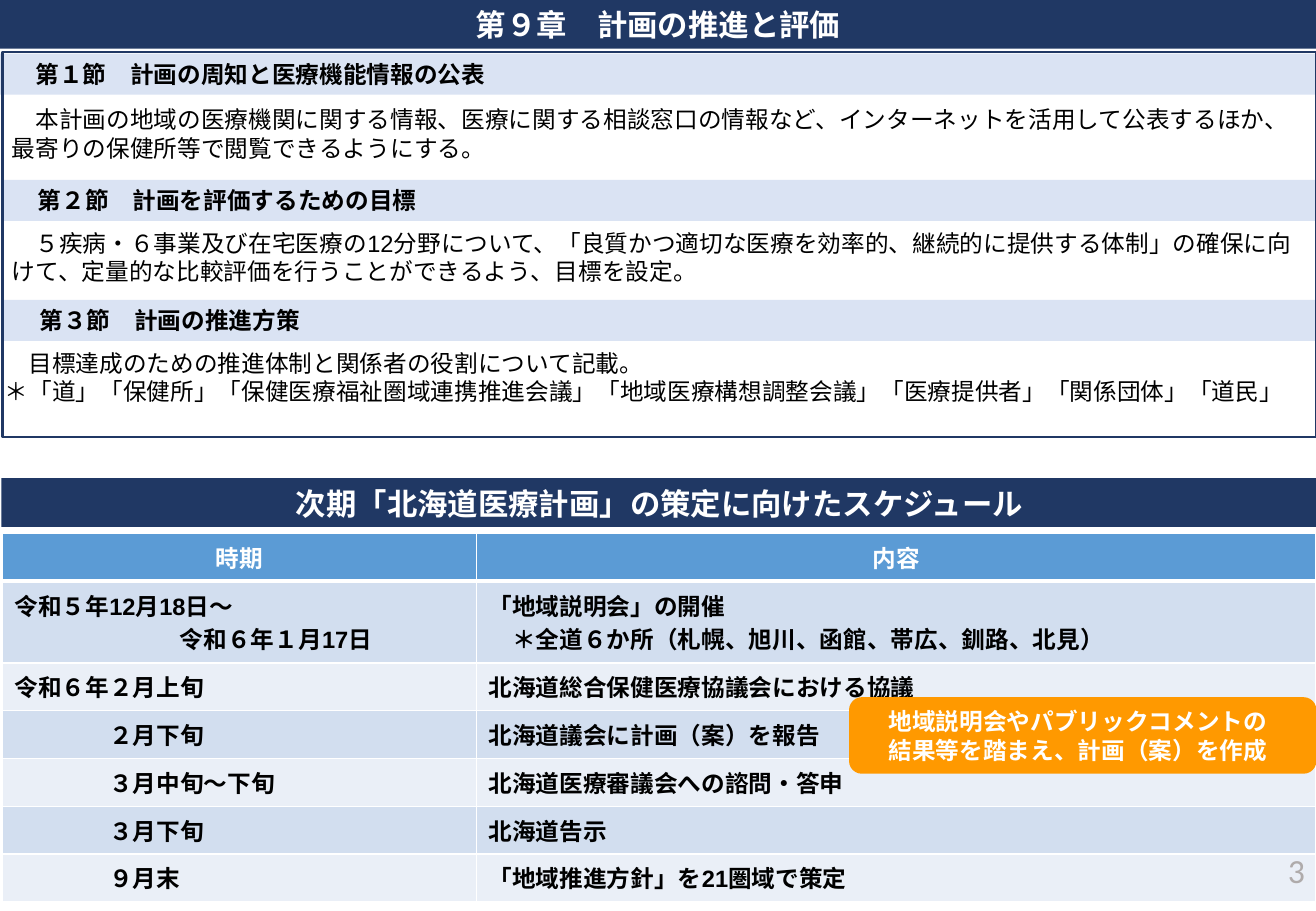
from itertools import groupby

from lxml.etree import SubElement as Sub
from pptx import Presentation
from pptx.dml.color import RGBColor
from pptx.enum.shapes import MSO_SHAPE as Shape
from pptx.enum.text import MSO_ANCHOR as Anchor, PP_ALIGN as Align
from pptx.oxml.ns import qn
from pptx.util import Cm, Pt

WIDE, HIGH = 27.51, 19.05
NAVY, PALE, BLUE, GOLD = "203864", "DAE3F3", "5B9BD5", "FF9900"
WHITE, BLACK, GRAY = "FFFFFF", "000000", "AFABAB"
BANDS = ("D2DEEF", "EAEFF7")

# left and top of the bar, heading, left and top of the body, body lines
PARTS = [
    (0, 1.12, "　第１節　計画の周知と医療機能情報の公表", 0, 2.06,
     ["　本計画の地域の医療機関に関する情報、医療に関する相談窓口の情報など、"
      "インターネットを活用して公表するほか、最寄りの保健所等で閲覧できるようにする。"]),
    (0.05, 3.76, "　第２節　計画を評価するための目標", 0, 4.65,
     ["　５疾病・６事業及び在宅医療の12分野について、「良質かつ適切な医療を効率的、"
      "継続的に提供する体制」の確保に向けて、定量的な比較評価を行うことができるよう、"
      "目標を設定。"]),
    (0.08, 6.27, "　第３節　計画の推進方策", -0.15, 7.16,
     ["　目標達成のための推進体制と関係者の役割について記載。",
      "＊「道」「保健所」「保健医療福祉圏域連携推進会議」「地域医療構想調整会議」"
      "「医療提供者」「関係団体」「道民」"]),
]

# dates, their indents in characters, content
PLAN = [
    (["令和５年12月18日～", "令和６年１月17日"], (0, 7),
     ["「地域説明会」の開催", "　＊全道６か所（札幌、旭川、函館、帯広、釧路、北見）"]),
    (["令和６年２月上旬"], (0,), ["北海道総合保健医療協議会における協議"]),
    (["２月下旬"], (4,), ["北海道議会に計画（案）を報告"]),
    (["３月中旬～下旬"], (4,), ["北海道医療審議会への諮問・答申"]),
    (["３月下旬"], (4,), ["北海道告示"]),
    (["９月末"], (4,), ["「地域推進方針」を21圏域で策定"]),
]


def tint(code):
    return RGBColor.from_string(code)


def write(frame, lines, color, size=14, bold=False, align=Align.LEFT,
          pitch=17, font="Calibri", digit="Arial", steps=()):
    """Fill a text frame; steps are left indents counted in characters."""
    frame.word_wrap = True
    frame.text = "\n".join(lines)
    for i, para in enumerate(frame.paragraphs):
        para.alignment = align
        para.line_spacing = Pt(pitch)
        if i < len(steps) and steps[i]:
            para._p.get_or_add_pPr().set("marL", str(Pt(size * steps[i])))
        para.text = ""
        for name, part in groupby(
                lines[i], lambda c: digit if c.isascii() else font):
            run = para.add_run()
            run.text = "".join(part)
            run.font.name = name
            run.font.size = Pt(size)
            run.font.bold = bold
            run.font.color.rgb = tint(color)


def block(slide, kind, x, y, w, h, fill=None, line=None):
    shape = slide.shapes.add_shape(kind, Cm(x), Cm(y), Cm(w), Cm(h))
    shape.shadow.inherit = False
    if fill:
        shape.fill.solid()
        shape.fill.fore_color.rgb = tint(fill)
    else:
        shape.fill.background()
    if line:
        shape.line.color.rgb = tint(line)
        shape.line.width = Pt(1.5)
    else:
        shape.line.fill.background()
    return shape


def label(slide, x, y, w, h, lines, color, **style):
    frame = slide.shapes.add_textbox(Cm(x), Cm(y), Cm(w), Cm(h)).text_frame
    write(frame, lines, color, **style)
    return frame


def title(slide, x, y, text):
    bar = block(slide, Shape.RECTANGLE, x, y, WIDE, 1.02, NAVY)
    write(bar.text_frame, [text], WHITE, size=18, bold=True,
          align=Align.CENTER, pitch=22)


def part(slide, x, y, head, left, top, lines):
    bar = block(slide, Shape.RECTANGLE, x, y, WIDE - x, 0.86, PALE)
    write(bar.text_frame, [head], BLACK, bold=True)
    label(slide, left, top, WIDE - left, 1.45, lines, BLACK)


def edge(cell, **widths):
    """Draw white cell borders; widths are points for each side."""
    props = cell._tc.get_or_add_tcPr()
    for side in "LRTB":
        line = Sub(props, qn("a:ln" + side), w=str(Pt(widths.get(side, 1))))
        Sub(Sub(line, qn("a:solidFill")), qn("a:srgbClr"), val=WHITE)


def paint(cell, fill):
    cell.fill.solid()
    cell.fill.fore_color.rgb = tint(fill)
    cell.vertical_anchor = Anchor.MIDDLE


def chart(slide):
    """Add the schedule table."""
    table = slide.shapes.add_table(
        len(PLAN) + 1, 2, Cm(0.05), Cm(11.15), Cm(27.46), Cm(7.71)).table
    for col, width in zip(table.columns, (9.91, 17.55)):
        col.width = Cm(width)
    for i, row in enumerate(table.rows):
        row.height = Cm(1.71 if i == 1 else 1)
    for cell, text in zip(table.rows[0].cells, ("時期", "内容")):
        edge(cell, B=3)
        paint(cell, BLUE)
        write(cell.text_frame, [text], WHITE, bold=True,
              align=Align.CENTER, pitch=20)
    for i, (dates, steps, items) in enumerate(PLAN):
        pair = ((dates, steps), (items, ()))
        for cell, (lines, marks) in zip(table.rows[i + 1].cells, pair):
            edge(cell, T=1 if i else 3)
            paint(cell, BANDS[i % 2])
            write(cell.text_frame, lines, BLACK, bold=True, pitch=20,
                  font="Arial", steps=marks)


def main():
    deck = Presentation()
    deck.slide_width, deck.slide_height = Cm(WIDE), Cm(HIGH)
    slide = deck.slides.add_slide(deck.slide_layouts[6])

    title(slide, 0, 0, "第９章　計画の推進と評価")
    for row in PARTS:
        part(slide, *row)
    block(slide, Shape.RECTANGLE, 0.05, 1.09, 27.47, 8.05, line=NAVY)

    title(slide, 0.03, 10, "次期「北海道医療計画」の策定に向けたスケジュール")
    chart(slide)
    note = block(slide, Shape.ROUNDED_RECTANGLE, 17.75, 14.58, 9.77, 1.6, GOLD)
    write(note.text_frame, ["　地域説明会やパブリックコメントの",
                            "　結果等を踏まえ、計画（案）を作成"], WHITE, bold=True)
    page = label(slide, 21.34, 17.68, 6.19, 1.02, ["3"], GRAY, size=20,
                 align=Align.RIGHT, pitch=24, digit="Calibri")
    page.vertical_anchor = Anchor.MIDDLE

    deck.save("out.pptx")


if __name__ == "__main__":
    main()
